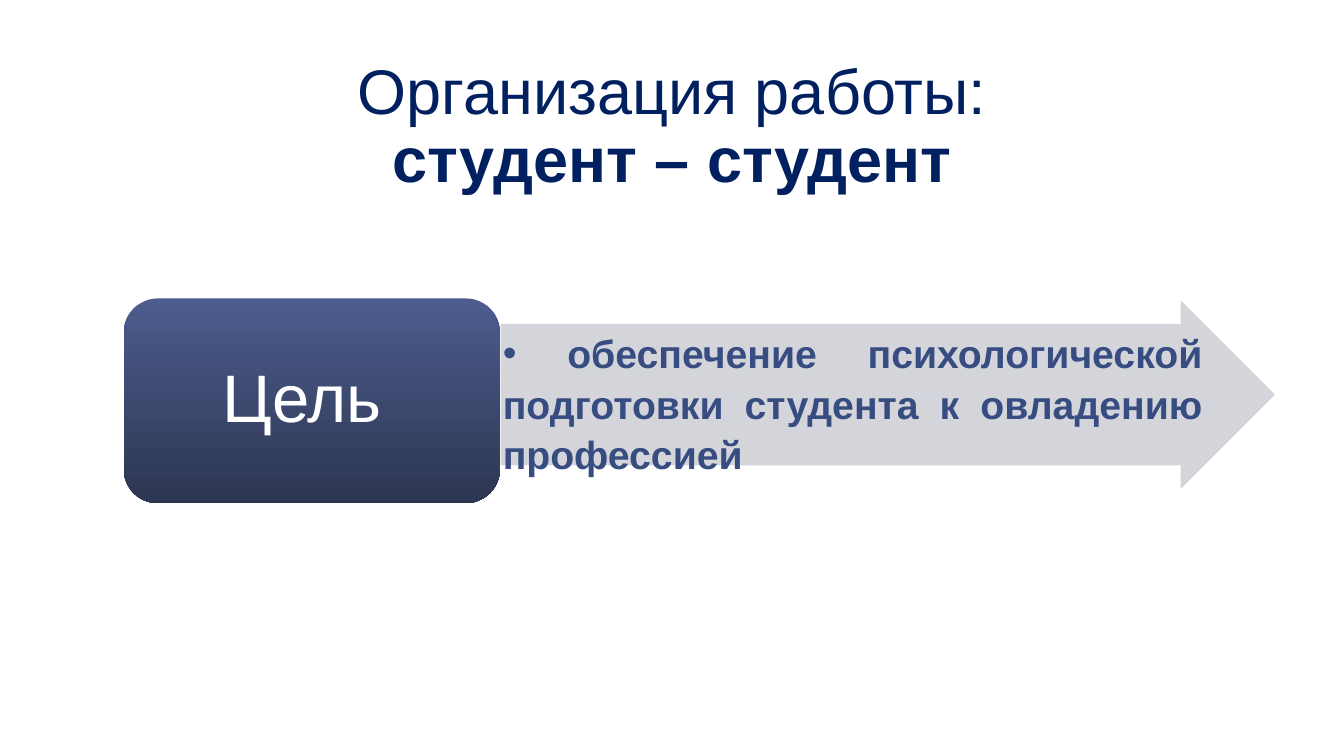
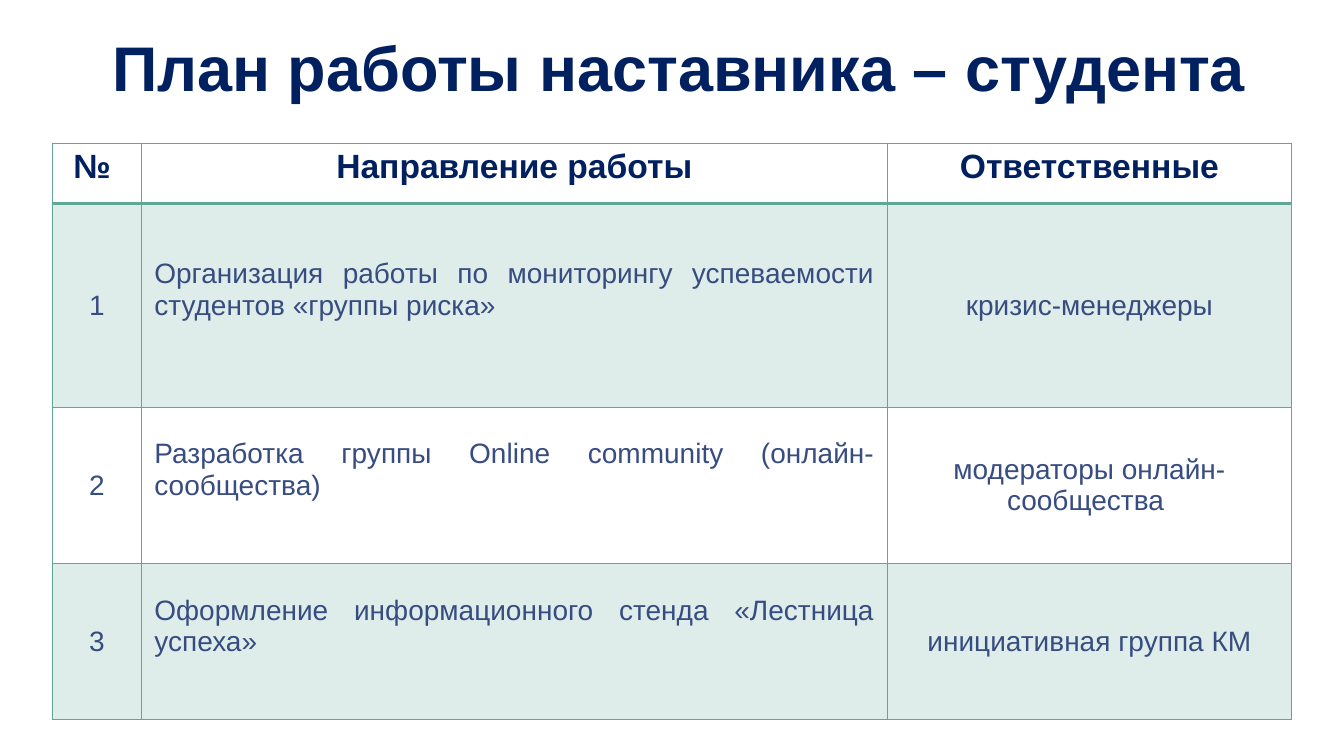
from dataclasses import dataclass

from pptx import Presentation
from pptx import util as u
from pptx.dml.color import RGBColor
from pptx.enum import shapes, text
from pptx.oxml.ns import qn
from lxml import etree

Cm, Pt = u.Cm, u.Pt
AL, AN, MSO = text.PP_ALIGN, text.MSO_ANCHOR, shapes.MSO_SHAPE


@dataclass(frozen=True)
class Theme:
    font: str = "Arial"
    navy: str = "002060"
    ink: str = "374C81"
    white: str = "FFFFFF"
    arrow: str = "D4D5DA"
    dark: str = "2D3652"
    light: str = "4C5C8D"
    line: str = "61A796"
    band: str = "DFEDEA"
    title: int = 45
    card: int = 48
    goal: int = 28
    head: int = 24
    cell: int = 20


def rgb(code):
    return RGBColor.from_string(code)


def apply(obj, vals):
    for key, val in vals.items():
        setattr(obj, key, val)


def place(shape, box):
    apply(shape, dict(zip(("left", "top", "width", "height"), map(Cm, box))))


class Deck:
    def __init__(self, theme):
        self.look = theme
        self.prs = Presentation()
        apply(self.prs, {"slide_width": Cm(33.87), "slide_height": Cm(19.05)})
        self.slide = None

    def page(self, layout):
        self.slide = self.prs.slides.add_slide(self.prs.slide_layouts[layout])

    def frame(self, shape, anchor, pad):
        """Set wrapping, anchor and insets (side, top and bottom)."""
        side, edge = map(Cm, pad)
        frame = shape.text_frame
        apply(frame, {"word_wrap": True, "auto_size": text.MSO_AUTO_SIZE.NONE,
                      "vertical_anchor": anchor, "margin_left": side,
                      "margin_right": side, "margin_top": edge,
                      "margin_bottom": edge})
        return frame

    def label(self, para, words, size, color, bold=False, **form):
        run = para.add_run()
        run.text = words
        base = {"alignment": AL.CENTER, "space_before": Pt(0)}
        apply(para, {**base, **form})
        apply(run.font, {"name": self.look.font, "size": Pt(size), "bold": bold})
        run.font.color.rgb = rgb(color)

    def title(self, box, lines, anchor, pad, gap=1.0):
        head = self.slide.shapes.title
        place(head, box)
        para = self.frame(head, anchor, pad).paragraphs[0]
        for i, (words, bold) in enumerate(lines):
            if i:
                para.add_line_break()
            self.label(para, words, self.look.title, self.look.navy, bold,
                       line_spacing=gap)

    def shape(self, kind, box):
        item = self.slide.shapes.add_shape(kind, *map(Cm, box))
        item.shadow.inherit = False
        item.line.fill.background()
        return item

    def arrow(self, box):
        item = self.shape(MSO.RIGHT_ARROW, box)
        item.adjustments[0] = 0.75
        item.fill.solid()
        item.fill.fore_color.rgb = rgb(self.look.arrow)

    def card(self, box, words):
        item = self.shape(MSO.ROUNDED_RECTANGLE, box)
        item.fill.gradient()
        item.fill.gradient_angle = 270
        for stop, code in zip(item.fill.gradient_stops,
                              (self.look.light, self.look.dark)):
            stop.color.rgb = rgb(code)
        para = self.frame(item, AN.MIDDLE, (0.76, 0.5)).paragraphs[0]
        self.label(para, words, self.look.card, self.look.white,
                   line_spacing=0.9)

    def bullet(self, box, words):
        body = self.slide.placeholders[1]
        place(body, box)
        # Bring the list in front of the arrow
        node = body._element
        node.getparent().append(node)
        para = self.frame(body, AN.TOP, (0.05, 0.05)).paragraphs[0]
        props = para._p.get_or_add_pPr()
        for key in ("marL", "indent"):
            props.set(key, "0")
        etree.SubElement(props, qn("a:buChar")).set("char", "•")
        self.label(para, words, self.look.goal, self.look.ink, True,
                   alignment=AL.JUSTIFY, line_spacing=1.08)

    def border(self, cell, base):
        props = cell._tc.get_or_add_tcPr()
        for side in "LRTB":
            width = base if side == "B" else 1
            line = etree.SubElement(props, qn(f"a:ln{side}"), w=str(Pt(width)))
            fill = etree.SubElement(line, qn("a:solidFill"))
            etree.SubElement(fill, qn("a:srgbClr"), val=self.look.line)

    def table(self, spot, cols, rows, data):
        box = (*spot, sum(cols), sum(rows))
        grid = self.slide.shapes.add_table(len(rows), len(cols),
                                           *map(Cm, box)).table
        apply(grid, {"first_row": False, "horz_banding": False})
        for col, size in zip(grid.columns, cols):
            col.width = Cm(size)
        for row, size in zip(grid.rows, rows):
            row.height = Cm(size)
        for r, line in enumerate(data):
            for c, words in enumerate(line):
                self.cell(grid.cell(r, c), words, r, c)

    def cell(self, cell, words, r, c):
        head, task = r == 0, r > 0 and c == 1
        # Tasks sit half a line above the middle
        apply(cell, {"margin_left": Cm(0.33), "margin_right": Cm(0.33),
                     "margin_top": Cm(0.13),
                     "margin_bottom": Cm(0.92 if task else 0.13),
                     "vertical_anchor": AN.TOP if head else AN.MIDDLE})
        self.border(cell, 2 if head else 1)
        if r % 2:
            cell.fill.solid()
            cell.fill.fore_color.rgb = rgb(self.look.band)
        else:
            cell.fill.background()
        size, color = ((self.look.head, self.look.navy) if head
                       else (self.look.cell, self.look.ink))
        self.label(cell.text_frame.paragraphs[0], words, size, color, head,
                   alignment=AL.JUSTIFY if task else AL.CENTER)


def main():
    deck = Deck(Theme())

    # Goal slide
    deck.page(1)
    deck.title((0.46, 1.32, 33.4, 3.81),
               [("Организация работы: ", False), ("студент – студент ", True)],
               AN.BOTTOM, (0.33, 0.18), 0.9)
    deck.arrow((12.62, 7.57, 19.51, 4.75))
    deck.card((3.12, 7.52, 9.48, 5.16), "Цель ")
    deck.bullet((12.62, 8.15, 17.73, 3.58),
                " обеспечение психологической подготовки студента "
                "к овладению профессией")

    # Plan slide
    deck.page(5)
    deck.title((1.12, -0.28, 32.41, 3.89),
               [("План работы наставника – студента ", True)],
               AN.MIDDLE, (0.25, 0.13))
    deck.table((1.32, 3.61), (2.24, 18.8, 10.19), (1.52, 5.13, 3.94, 3.94), [
        ("№ ", "Направление работы", "Ответственные"),
        ("1", "Организация работы по мониторингу успеваемости студентов "
              "«группы риска»", "кризис-менеджеры"),
        ("2", "Разработка группы Online community (онлайн-сообщества)",
         "модераторы онлайн-сообщества "),
        ("3", "Оформление информационного стенда «Лестница успеха»",
         "инициативная группа КМ"),
    ])

    deck.prs.save("out.pptx")


if __name__ == "__main__":
    main()
